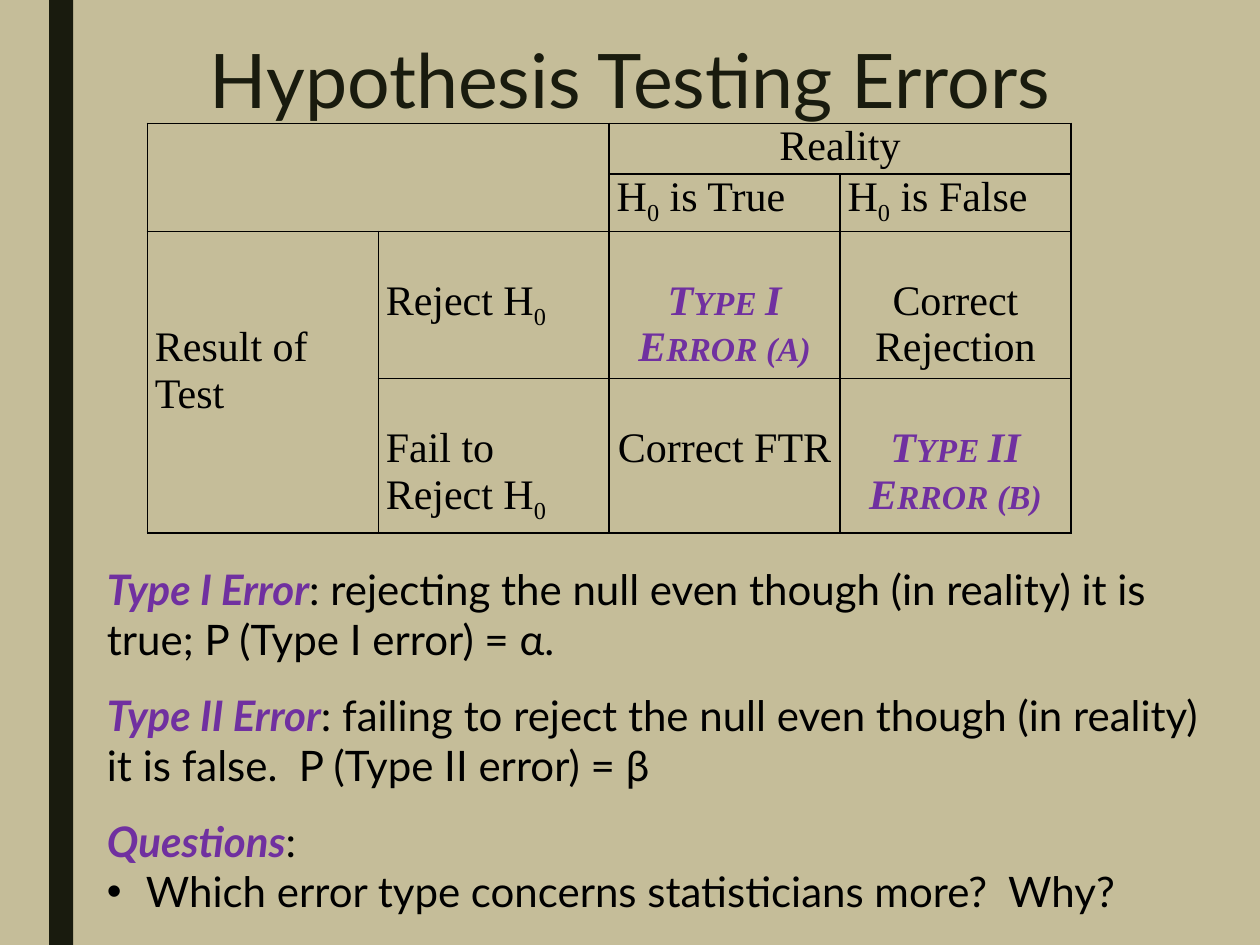
from lxml.etree import SubElement
from pptx import Presentation
from pptx.dml.color import RGBColor
from pptx.enum.shapes import MSO_SHAPE
from pptx.enum.text import MSO_AUTO_SIZE, PP_ALIGN
from pptx.oxml.ns import qn
from pptx.util import Inches, Pt

COLORS = {"bg": "C5BD99", "dark": "191B0E", "text": "000000", "accent": "7030A0"}
SANS, SERIF = "Lato", "Times New Roman"
LINE = 0.37
TERM = {"color": "accent", "bold": True, "italic": True}
SUB = ("0", {"baseline": -25000})


def rgb(name):
    return RGBColor.from_string(COLORS[name])


def add_run(p, text, font=SANS, size=24, color="text", bold=False, italic=False,
            caps=False, baseline=0):
    r = p.add_run()
    r.text = text
    r.font.name, r.font.size = font, Pt(size)
    r.font.bold, r.font.italic = bold, italic
    r.font.color.rgb = rgb(color)
    rPr = r._r.get_or_add_rPr()
    if caps:
        rPr.set("cap", "small")
    if baseline:
        rPr.set("baseline", str(baseline))


def add_text_box(s, box):
    sp = s.shapes.add_textbox(*map(Inches, box))
    sp.text_frame.word_wrap = True
    return sp.text_frame


def add_side_bar(s, box):
    sp = s.shapes.add_shape(MSO_SHAPE.RECTANGLE, *map(Inches, box))
    sp.shadow.inherit = False
    sp.fill.solid()
    sp.fill.fore_color.rgb = rgb("dark")
    sp.line.fill.background()


def add_title(s, box):
    p = add_text_box(s, box).paragraphs[0]
    p.alignment = PP_ALIGN.CENTER
    p.line_spacing = 0.89
    add_run(p, "Hypothesis Testing Errors", size=43, color="dark")


def add_borders(cell):
    tcPr = cell._tc.get_or_add_tcPr()
    for i, side in enumerate(("lnL", "lnR", "lnT", "lnB")):
        ln = SubElement(tcPr, qn(f"a:{side}"), w=str(Pt(1)))
        fill = SubElement(ln, qn("a:solidFill"))
        SubElement(fill, qn("a:srgbClr"), val=COLORS["text"])
        tcPr.remove(ln)
        tcPr.insert(i, ln)


def fill_cell(cell, runs, centered=False, lines_above=0):
    cell.margin_top = Inches(LINE * lines_above)
    p = cell.text_frame.paragraphs[0]
    p.alignment = PP_ALIGN.CENTER if centered else PP_ALIGN.LEFT
    for text, fmt in runs:
        add_run(p, text, font=SERIF, **fmt)


def add_error_table(s, box):
    table = s.shapes.add_table(4, 4, *map(Inches, box)).table
    table.first_row = table.horz_banding = False
    for row, height in zip(table.rows, (0.36, 0.36, 1.09, 1.09)):
        row.height = Inches(height)
    for col in table.columns:
        col.width = Inches(box[2] / 4)
    for cell in table.iter_cells():
        cell.margin_left = cell.margin_right = Inches(0.06)
        cell.margin_top = cell.margin_bottom = 0
        cell.fill.background()
        add_borders(cell)
    for first, last in (((0, 0), (1, 1)), ((0, 2), (0, 3)), ((2, 0), (3, 0))):
        table.cell(*first).merge(table.cell(*last))

    error = {**TERM, "caps": True}
    cells = (
        (0, 2, [("Reality", {})], True, 0),
        (1, 2, [("H", {}), SUB, (" is True", {})], False, 0),
        (1, 3, [("H", {}), SUB, (" is False", {})], False, 0),
        (2, 0, [("Result of Test", {})], False, 2),
        (2, 1, [("Reject H", {}), SUB], False, 1),
        (2, 2, [("Type I Error (α)", error)], True, 1),
        (2, 3, [("Correct Rejection", {})], True, 1),
        (3, 1, [("Fail to Reject H", {}), SUB], False, 1),
        (3, 2, [("Correct FTR", {})], True, 1),
        (3, 3, [("Type II Error (β)", error)], True, 1),
    )
    for row, col, runs, centered, lines_above in cells:
        fill_cell(table.cell(row, col), runs, centered, lines_above)


def add_definitions(s, box):
    tf = add_text_box(s, box)
    tf.auto_size = MSO_AUTO_SIZE.SHAPE_TO_FIT_TEXT
    items = (
        ("Type I Error", ": rejecting the null even though (in reality) it is true; "
                         "P (Type I error) = α."),
        ("Type II Error", ": failing to reject the null even though (in reality) it is "
                          "false.  P (Type II error) = β"),
        ("Questions", ":"),
    )
    for i, (term, meaning) in enumerate(items):
        p = tf.add_paragraph() if i else tf.paragraphs[0]
        p.space_before = Pt(14.5 if i else 0)
        add_run(p, term, **TERM)
        add_run(p, meaning)
    p = tf.add_paragraph()
    pPr = p._p.get_or_add_pPr()
    pPr.set("marL", str(Inches(0.31)))
    pPr.set("indent", str(-Inches(0.31)))
    SubElement(pPr, qn("a:buFont"), typeface="Arial")
    SubElement(pPr, qn("a:buChar"), char="•")
    add_run(p, "Which error type concerns statisticians more?  Why?")


def main():
    prs = Presentation()
    prs.slide_width, prs.slide_height = Inches(10), Inches(7.5)
    s = prs.slides.add_slide(prs.slide_layouts[6])
    s.background.fill.solid()
    s.background.fill.fore_color.rgb = rgb("bg")
    add_side_bar(s, (0.39, 0, 0.19, 7.5))
    add_title(s, (0.5, 0.3, 9, 0.78))
    add_error_table(s, (1.17, 0.98, 7.33, 2.9))
    add_definitions(s, (0.75, 4.42, 8.92, 3.26))
    prs.save("out.pptx")


if __name__ == "__main__":
    main()
